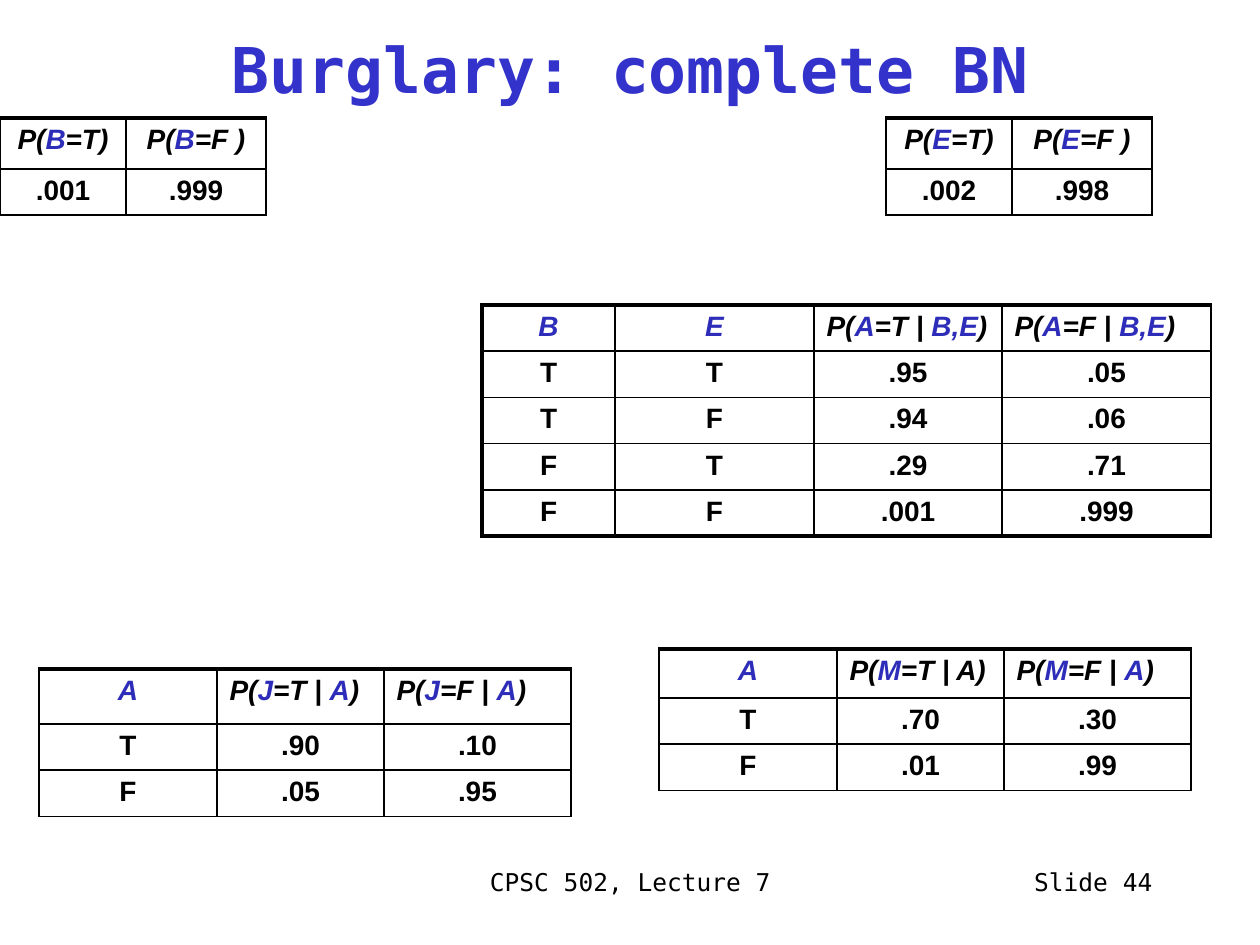
from dataclasses import dataclass

from lxml import etree
from pptx import Presentation
from pptx.dml.color import RGBColor
from pptx.enum.text import MSO_ANCHOR, PP_ALIGN
from pptx.oxml.ns import qn
from pptx.util import Emu, Pt

LEFT, CENTER, RIGHT = PP_ALIGN.LEFT, PP_ALIGN.CENTER, PP_ALIGN.RIGHT
TOP, MIDDLE = MSO_ANCHOR.TOP, MSO_ANCHOR.MIDDLE
PX_PER_INCH = 126
MONO = "DejaVu Sans Mono"
SANS = "Arial"
THIN, THICK = 1, 2.25
TITLE_ONLY = 5
COLORS = {
    "title": "3333CC",
    "variable": "2D2DB9",
    "ink": "000000",
    "paper": "FFFFFF",
}


@dataclass(frozen=True)
class ProbabilityTable:
    left: int
    top: int
    columns: tuple[int, ...]
    header_height: int
    rows: tuple[tuple[str, ...], ...]
    heavy_sides: str = "T"


@dataclass(frozen=True)
class FooterText:
    left: int
    width: int
    text: str
    align: PP_ALIGN


ROW_HEIGHT = 44
TABLES = (
    ProbabilityTable(482, 305, (133, 199, 188, 209), ROW_HEIGHT, (
        ("*B*", "*E*", "P(*A*=T | *B,E*)", "P(*A*=F | *B,E*)"),
        ("T", "T", ".95", ".05"),
        ("T", "F", ".94", ".06"),
        ("F", "T", ".29", ".71"),
        ("F", "F", ".001", ".999"),
    ), heavy_sides="LTB"),
    ProbabilityTable(0, 118, (126, 140), 51, (
        ("P(*B*=T)", "P(*B*=F )"),
        (".001", ".999"),
    )),
    ProbabilityTable(886, 118, (126, 140), 51, (
        ("P(*E*=T)", "P(*E*=F )"),
        (".002", ".998"),
    )),
    ProbabilityTable(39, 669, (178, 167, 187), 55, (
        ("*A*", "P(*J*=T | *A*)", "P(*J*=F | *A*)"),
        ("T", ".90", ".10"),
        ("F", ".05", ".95"),
    )),
    ProbabilityTable(659, 649, (178, 167, 187), 49, (
        ("*A*", "P(*M*=T | A)", "P(*M*=F | *A*)"),
        ("T", ".70", ".30"),
        ("F", ".01", ".99"),
    )),
)
FOOTERS = (
    FooterText(431, 399, "CPSC 502, Lecture 7", CENTER),
    FooterText(903, 262, "Slide 44", RIGHT),
)


def px(value: int) -> Emu:
    return Emu(round(value * 914400 / PX_PER_INCH))


def write_text(frame, text: str, *, font: str, size: int, color: str = "ink",
               align: PP_ALIGN = CENTER, anchor: MSO_ANCHOR = TOP,
               bold: bool = False, italic: bool = False) -> None:
    frame.word_wrap = True
    frame.vertical_anchor = anchor
    para = frame.paragraphs[0]
    para.alignment = align
    para.space_before = Pt(0)
    for index, part in enumerate(text.split("*")):
        if not part:
            continue
        span = para.add_run()
        span.text = part
        span.font.name = font
        span.font.size = Pt(size)
        span.font.bold = bold
        span.font.italic = italic
        shade = "variable" if index % 2 else color
        span.font.color.rgb = RGBColor.from_string(COLORS[shade])


def set_borders(cell, widths: dict[str, float]) -> None:
    properties = cell._tc.get_or_add_tcPr()
    for index, side in enumerate("LRTB"):
        line = etree.Element(qn(f"a:ln{side}"), w=str(Pt(widths[side])))
        fill = etree.SubElement(line, qn("a:solidFill"))
        etree.SubElement(fill, qn("a:srgbClr"), val=COLORS["ink"])
        properties.insert(index, line)


def draw_table(page, item: ProbabilityTable) -> None:
    row_count, column_count = len(item.rows), len(item.columns)
    height = item.header_height + ROW_HEIGHT * (row_count - 1)
    frame = page.shapes.add_table(row_count, column_count, px(item.left), px(item.top),
                                  px(sum(item.columns)), px(height))
    table = frame.table
    table.first_row = table.horz_banding = False
    for column, width in zip(table.columns, item.columns):
        column.width = px(width)
    for row_index, texts in enumerate(item.rows):
        header = row_index == 0
        table.rows[row_index].height = px(item.header_height if header else ROW_HEIGHT)
        for column_index, text in enumerate(texts):
            cell = table.cell(row_index, column_index)
            cell.fill.solid()
            cell.fill.fore_color.rgb = RGBColor.from_string(COLORS["paper"])
            write_text(cell.text_frame, text, font=SANS, size=16, bold=True, italic=header,
                       align=LEFT if "|" in text else CENTER)
            outer = {
                "L": column_index == 0,
                "R": column_index == column_count - 1,
                "T": header,
                "B": row_index == row_count - 1,
            }
            set_borders(cell, {side: THICK if edge and side in item.heavy_sides else THIN
                               for side, edge in outer.items()})


def draw_footer(page, item: FooterText) -> None:
    box = page.shapes.add_textbox(px(item.left), px(861), px(item.width), px(63))
    write_text(box.text_frame, item.text, font=MONO, size=14, align=item.align)


def main() -> None:
    deck = Presentation()
    deck.slide_width, deck.slide_height = px(1260), px(945)
    page = deck.slides.add_slide(deck.slide_layouts[TITLE_ONLY])
    title = page.shapes.title
    title.left, title.top, title.width, title.height = px(42), px(21), px(1176), px(95)
    write_text(title.text_frame, "Burglary: complete BN", font=MONO, size=36,
               color="title", bold=True, anchor=MIDDLE)
    for footer in FOOTERS:
        draw_footer(page, footer)
    for table in TABLES:
        draw_table(page, table)
    deck.save("out.pptx")


if __name__ == "__main__":
    main()
